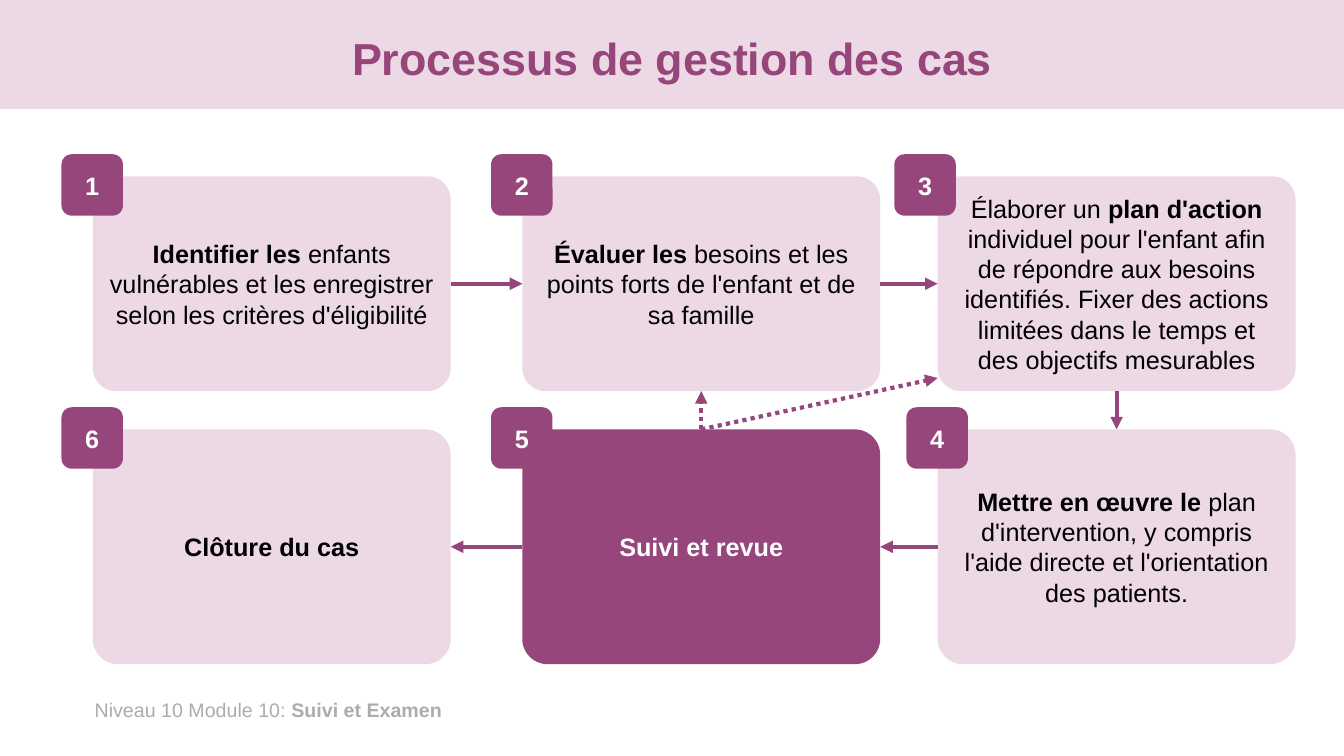
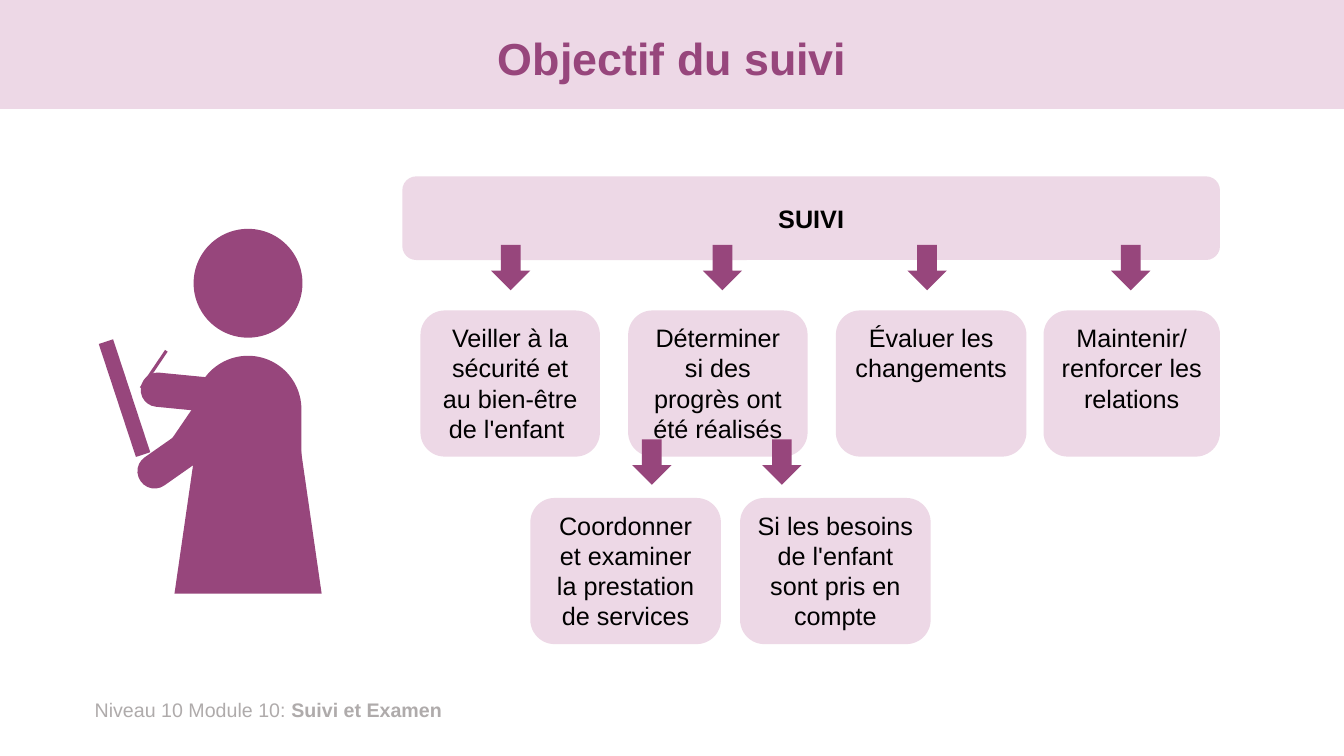
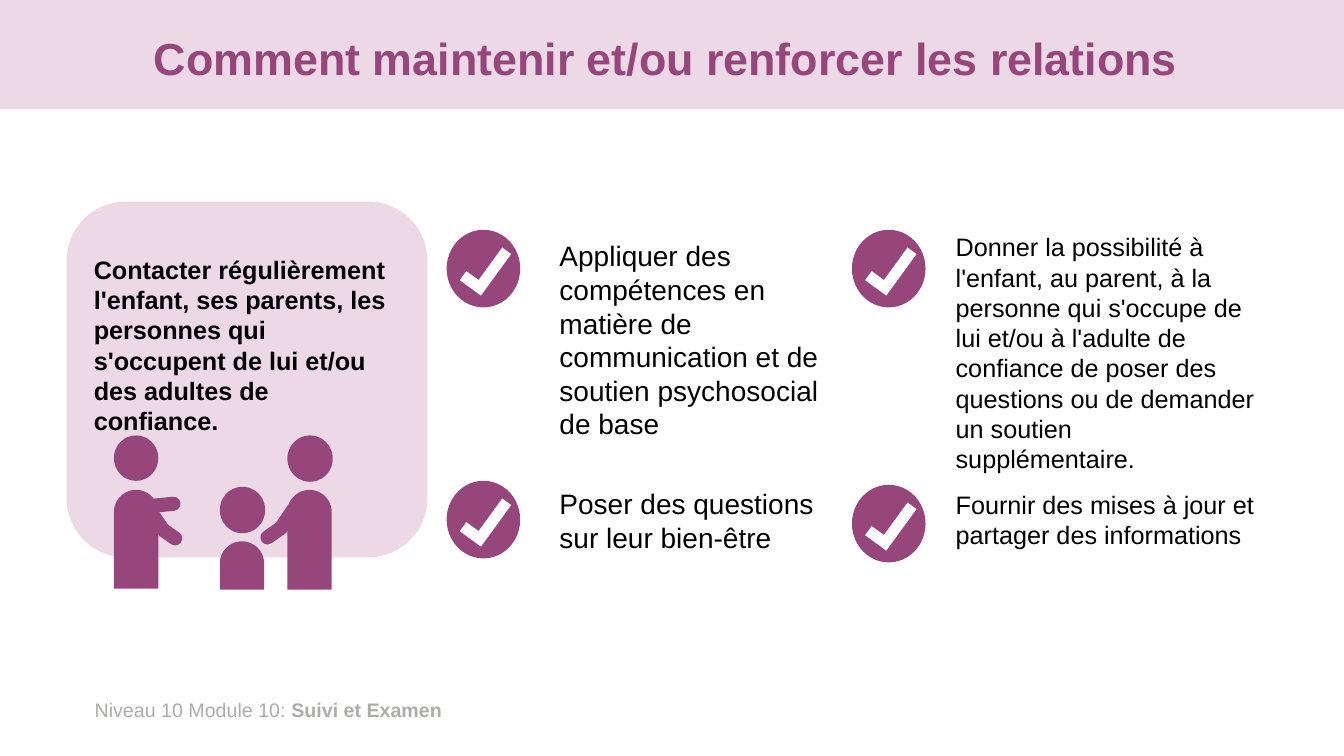
from dataclasses import dataclass

from lxml import etree
from pptx import Presentation
from pptx.dml.color import RGBColor
from pptx.enum.dml import MSO_LINE
from pptx.enum.shapes import MSO_CONNECTOR, MSO_SHAPE
from pptx.enum.text import MSO_ANCHOR, PP_ALIGN
from pptx.oxml.ns import qn
from pptx.util import Inches, Pt

RECTANGLE = MSO_SHAPE.RECTANGLE
ROUNDED = MSO_SHAPE.ROUNDED_RECTANGLE
LIMB = MSO_SHAPE.ROUND_2_SAME_RECTANGLE
OVAL = MSO_SHAPE.OVAL
SKIRT = MSO_SHAPE.FLOWCHART_MANUAL_OPERATION
DOWN_ARROW = MSO_SHAPE.DOWN_ARROW
CORNER = MSO_SHAPE.CORNER
STRAIGHT = MSO_CONNECTOR.STRAIGHT
DOTTED = MSO_LINE.ROUND_DOT
TOP_ANCHOR, MIDDLE_ANCHOR = MSO_ANCHOR.TOP, MSO_ANCHOR.MIDDLE
LEFT_ALIGN, CENTER_ALIGN = PP_ALIGN.LEFT, PP_ALIGN.CENTER
TOP, LEFT, BOTTOM, RIGHT = range(4)

COLORS = {
    "plum": "97467C",
    "pink": "EDD8E6",
    "gray": "AFABAB",
    "black": "000000",
    "white": "FFFFFF",
}
FONT = "Arial"
ROUND_END = (0.49, 0)
DOME = (0.5, 0)


@dataclass
class Part:
    kind: int
    left: float
    top: float
    width: float
    height: float
    rotation: float = 0
    adjustments: tuple = ()
    fill: str = "plum"


@dataclass
class TextStyle:
    size: int = 18
    color: str = "black"
    align: int = CENTER_ALIGN
    anchor: int = MIDDLE_ANCHOR
    line_spacing: float = 1.0
    margin_top: float = 0.05


@dataclass
class Step:
    number: int
    column: int
    row: int
    runs: list
    fill: str = "pink"
    text_color: str = "black"
    badge_shift: float = 0.31


@dataclass
class Arrow:
    start: int
    start_side: int
    end: int
    end_side: int


BODY = TextStyle(align=LEFT_ALIGN, anchor=TOP_ANCHOR)
LARGE_BODY = TextStyle(20, align=LEFT_ALIGN, anchor=TOP_ANCHOR)
BOX = TextStyle(anchor=TOP_ANCHOR)


# Shared drawing functions
def color(name: str) -> RGBColor:
    return RGBColor.from_string(COLORS[name])


def write(shape, paragraphs: list, style: TextStyle) -> None:
    """Each paragraph is a list of (text, bold) runs."""
    frame = shape.text_frame
    frame_format = {
        "word_wrap": True,
        "vertical_anchor": style.anchor,
        "margin_left": Inches(0.1),
        "margin_right": Inches(0.1),
        "margin_top": Inches(style.margin_top),
        "margin_bottom": Inches(0.05),
    }
    for name, value in frame_format.items():
        setattr(frame, name, value)
    for index, runs in enumerate(paragraphs):
        paragraph = frame.add_paragraph() if index else frame.paragraphs[0]
        paragraph.alignment = style.align
        paragraph.line_spacing = style.line_spacing
        for text, bold in runs:
            run = paragraph.add_run()
            run.text = text
            font_format = {"name": FONT, "size": Pt(style.size), "bold": bold}
            for name, value in font_format.items():
                setattr(run.font, name, value)
            run.font.color.rgb = color(style.color)


def add_part(shapes, part: Part):
    shape = shapes.add_shape(
        part.kind, Inches(part.left), Inches(part.top),
        Inches(part.width), Inches(part.height),
    )
    shape.shadow.inherit = False
    shape.fill.solid()
    shape.fill.fore_color.rgb = color(part.fill)
    shape.line.fill.background()
    shape.rotation = part.rotation
    for index, value in enumerate(part.adjustments):
        shape.adjustments[index] = value
    return shape


def add_group(slide, parts: list):
    group = slide.shapes.add_group_shape()
    for part in parts:
        add_part(group.shapes, part)
    return group


def add_text(slide, left: float, top: float, width: float, height: float,
             runs: list, style: TextStyle) -> None:
    box = slide.shapes.add_textbox(
        Inches(left), Inches(top), Inches(width), Inches(height))
    write(box, [runs], style)


def add_line(shapes, start: tuple, end: tuple, weight: float):
    ends = [Inches(value) for value in (*start, *end)]
    line = shapes.add_connector(STRAIGHT, *ends)
    line.line.color.rgb = color("plum")
    line.line.width = Pt(weight)
    etree.SubElement(line._element.spPr, qn("a:effectLst"))
    return line


def add_arrow(slide, start, start_side: int, dotted: bool = False,
              end_point: tuple = (0, 0)):
    arrow = add_line(slide.shapes, (0, 0), end_point, 3)
    arrow.begin_connect(start, start_side)
    if dotted:
        arrow.line.dash_style = DOTTED
    outline = arrow.line._get_or_add_ln()
    etree.SubElement(outline, qn("a:tailEnd"), type="triangle")
    return arrow


def new_slide(presentation, title: str):
    slide = presentation.slides.add_slide(presentation.slide_layouts[6])
    add_part(slide.shapes, Part(RECTANGLE, 0, 0, 13.33, 1.08, fill="pink"))
    add_text(slide, 0.84, 6.87, 4.55, 0.34,
             [("Niveau 10 Module 10: ", False), ("Suivi et Examen", True)],
             TextStyle(14, "gray", LEFT_ALIGN, TOP_ANCHOR))
    add_text(slide, 0.92, 0.13, 11.5, 0.95, [(title, True)],
             TextStyle(32, "plum", line_spacing=0.9))
    return slide


# Slide 1: six linked steps
COLUMNS = (0.92, 5.18, 9.3)
ROWS = ((1.75, 2.13), (4.26, 2.33))
STEP_WIDTH = 3.55
BADGE_SIZE = 0.61
STEPS = [
    Step(1, 0, 0, [
        ("Identifier les ", True),
        ("enfants vulnérables et les enregistrer selon les critères "
         "d'éligibilité", False)]),
    Step(2, 1, 0, [
        ("Évaluer les ", True),
        ("besoins et les points forts de l'enfant et de sa famille", False)]),
    Step(3, 2, 0, [
        ("Élaborer un ", False),
        ("plan d'action ", True),
        ("individuel pour l'enfant afin de répondre aux besoins identifiés. "
         "Fixer des actions limitées dans le temps et des objectifs "
         "mesurables", False)], badge_shift=0.43),
    Step(6, 0, 1, [("Clôture du cas", True)]),
    Step(5, 1, 1, [("Suivi et revue", True)], "plum", "white"),
    Step(4, 2, 1, [
        ("Mettre en œuvre le ", True),
        ("plan d'intervention, y compris l'aide directe et l'orientation "
         "des patients.", False)]),
]
STEP_ARROWS = [
    Arrow(1, RIGHT, 2, LEFT),
    Arrow(2, RIGHT, 3, LEFT),
    Arrow(3, BOTTOM, 4, TOP),
    Arrow(4, LEFT, 5, RIGHT),
    Arrow(5, LEFT, 6, RIGHT),
    Arrow(5, TOP, 2, BOTTOM),
]


def build_process(presentation) -> None:
    slide = new_slide(presentation, "Processus de gestion des cas")
    cards = {}
    for step in STEPS:
        left = COLUMNS[step.column]
        top, height = ROWS[step.row]
        card = add_part(slide.shapes, Part(
            ROUNDED, left, top, STEP_WIDTH, height,
            adjustments=(0.108,), fill=step.fill))
        write(card, [step.runs], TextStyle(color=step.text_color))
        badge = add_part(slide.shapes, Part(
            ROUNDED, left - step.badge_shift, top - 0.22,
            BADGE_SIZE, BADGE_SIZE))
        write(badge, [[(str(step.number), True)]], TextStyle(color="white"))
        cards[step.number] = card
    for link in STEP_ARROWS:
        arrow = add_arrow(slide, cards[link.start], link.start_side,
                          dotted=link.start_side == TOP)
        arrow.end_connect(cards[link.end], link.end_side)
    add_arrow(slide, cards[5], TOP, True, (COLUMNS[2], 3.75))


# Slide 2: purposes of follow-up
BOX_HEIGHT = 1.45
PURPOSES = [
    (4.17, 3.08, 1.78, ["Veiller à la sécurité et au bien-être de l'enfant "]),
    (6.23, 3.08, 1.78, ["Déterminer si des progrès ont été réalisés"]),
    (8.29, 3.08, 1.89, ["Évaluer les changements"]),
    (10.35, 3.08, 1.75, ["Maintenir/", "renforcer les relations"]),
    (5.26, 4.94, 1.89, ["Coordonner et examiner la prestation de services"]),
    (7.34, 4.94, 1.89, ["Si les besoins de l'enfant sont pris en compte"]),
]
ARROW_ROWS = {2.43: (4.87, 6.97, 9, 11.02), 4.36: (6.27, 7.56)}
CASE_WORKER = [
    Part(LIMB, 1.8, 3.86, 0.34, 0.81, 214.3, ROUND_END),
    Part(LIMB, 1.45, 4.34, 0.34, 0.55, 235, ROUND_END),
    Part(RECTANGLE, 1.16, 3.36, 0.15, 1.18, 341.8),
    Part(LIMB, 1.69, 3.43, 0.34, 0.93, 275.6, ROUND_END),
    Part(SKIRT, 1.73, 3.87, 1.46, 2.02, 180),
    Part(LIMB, 1.93, 3.53, 1.06, 2.33, 0, DOME),
    Part(OVAL, 1.92, 2.27, 1.08, 1.08),
]


def build_purpose(presentation) -> None:
    slide = new_slide(presentation, "Objectif du suivi")
    header = add_part(slide.shapes,
                      Part(ROUNDED, 3.99, 1.75, 8.11, 0.83, fill="pink"))
    write(header, [[("SUIVI", True)]], TextStyle())
    for left, top, width, lines in PURPOSES:
        box = add_part(slide.shapes, Part(
            ROUNDED, left, top, width, BOX_HEIGHT, fill="pink"))
        write(box, [[(line, False)] for line in lines], BOX)
    worker = add_group(slide, CASE_WORKER)
    add_line(worker.shapes, (1.65, 3.48), (1.4, 3.85), 2.25)
    for top, lefts in ARROW_ROWS.items():
        for left in lefts:
            add_part(slide.shapes, Part(DOWN_ARROW, left, top, 0.39, 0.45))


# Slide 3: ways to strengthen relationships
ADVICE = [
    (5.45, 2.32, 2.91, 1.45, LARGE_BODY,
     "Appliquer des compétences en matière de communication et de soutien "
     "psychosocial de base"),
    (5.45, 4.78, 2.91, 0.77, LARGE_BODY,
     "Poser des questions sur leur bien-être"),
    (9.38, 2.25, 3.18, 2.52, BODY,
     "Donner la possibilité à l'enfant, au parent, à la personne qui s'occupe "
     "de lui et/ou à l'adulte de confiance de poser des questions ou de "
     "demander un soutien supplémentaire."),
    (9.38, 4.8, 3.18, 0.71, BODY,
     "Fournir des mises à jour et partager des informations"),
]
CHECKS = [(4.43, 2.28), (4.43, 4.77), (8.45, 2.28), (8.45, 4.81)]
CHILD_AND_PARENT = [
    Part(LIMB, 2.18, 5.37, 0.44, 0.48, 0, DOME),
    Part(OVAL, 2.18, 4.83, 0.45, 0.46),
    Part(LIMB, 2.85, 4.86, 0.44, 0.99, 0, DOME),
    Part(OVAL, 2.85, 4.32, 0.45, 0.46),
    Part(LIMB, 2.77, 4.99, 0.14, 0.34, 214.3, ROUND_END),
    Part(LIMB, 2.62, 5.19, 0.14, 0.23, 235, ROUND_END),
]
VISITOR = [
    Part(LIMB, 1.48, 4.99, 0.14, 0.34, 145.7, ROUND_END),
    Part(LIMB, 1.63, 5.2, 0.14, 0.23, 125, ROUND_END),
    Part(LIMB, 1.53, 4.82, 0.14, 0.38, 84.4, ROUND_END),
    Part(LIMB, 1.13, 4.86, 0.44, 0.98, 0, DOME),
    Part(OVAL, 1.13, 4.32, 0.44, 0.45),
]


def build_relationships(presentation) -> None:
    slide = new_slide(presentation,
                      "Comment maintenir et/ou renforcer les relations ")
    for left, top, width, height, style, text in ADVICE:
        add_text(slide, left, top, width, height, [(text, False)], style)
    for left, top in CHECKS:
        add_group(slide, [
            Part(OVAL, left, top, 0.73, 0.77),
            Part(CORNER, left + 0.13, top + 0.24, 0.51, 0.26, 306,
                 (0.42, 0.43), "white"),
        ])
    card = add_part(slide.shapes,
                    Part(ROUNDED, 0.66, 2, 3.58, 3.53, fill="pink"))
    write(card, [[(
        "Contacter régulièrement l'enfant, ses parents, les personnes qui "
        "s'occupent de lui et/ou des adultes de confiance.", True)]],
        TextStyle(align=LEFT_ALIGN, anchor=TOP_ANCHOR, margin_top=0.35))
    for figure in (CHILD_AND_PARENT, VISITOR):
        add_group(slide, figure)


def main() -> None:
    presentation = Presentation()
    presentation.slide_width = Inches(13.33)
    presentation.slide_height = Inches(7.5)
    build_process(presentation)
    build_purpose(presentation)
    build_relationships(presentation)
    presentation.save("out.pptx")


if __name__ == "__main__":
    main()
